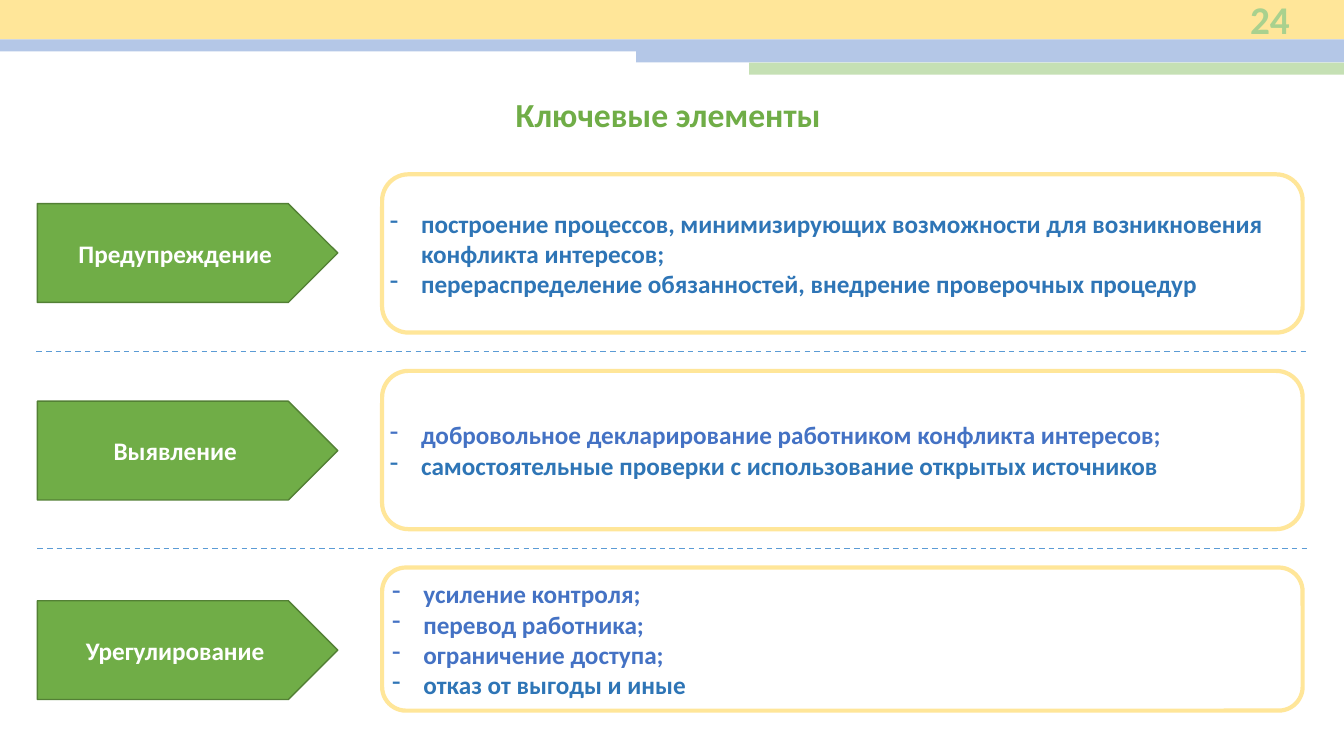
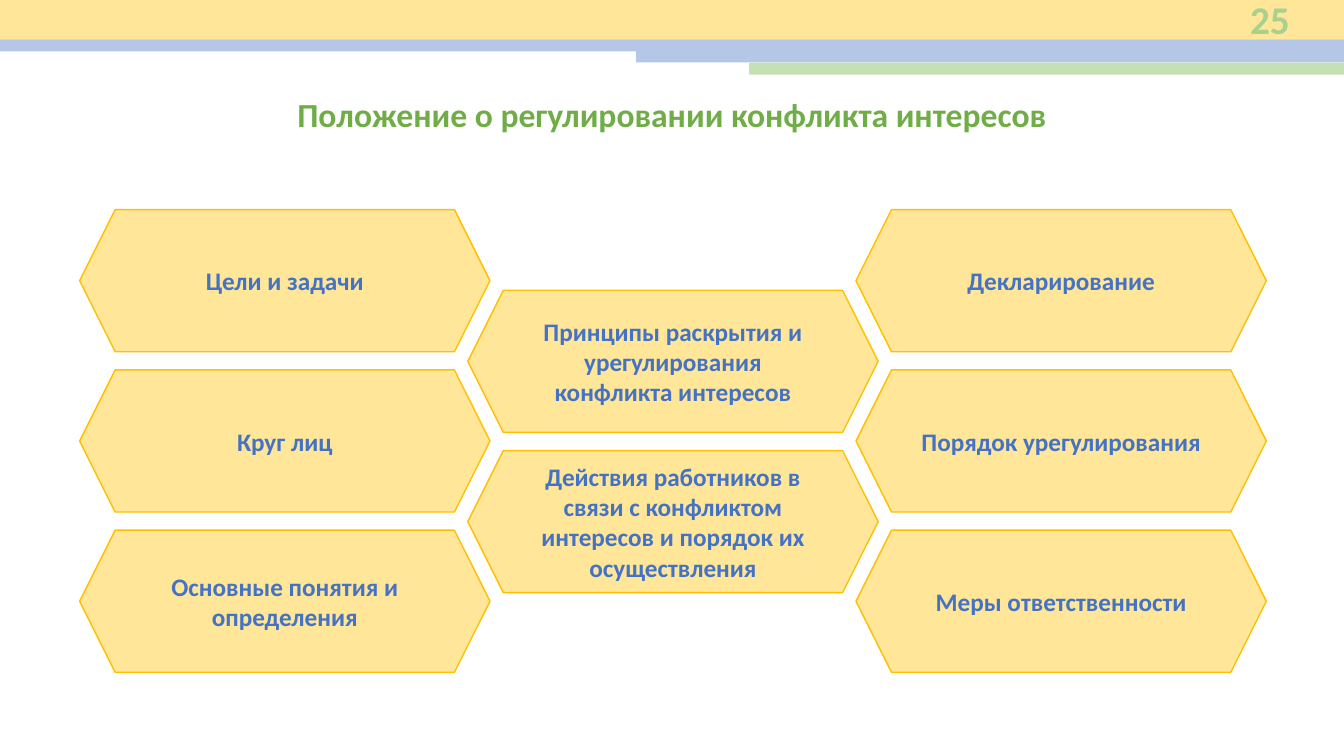
"""Build two slides about managing conflicts of interest."""
from lxml import etree
from pptx import Presentation
from pptx.dml.color import RGBColor
from pptx.enum import dml, shapes, text
from pptx.oxml import ns
from pptx.util import Inches, Pt

YELLOW = RGBColor(0xFF, 0xE6, 0x99)
GOLD = RGBColor(0xFF, 0xC0, 0x00)
PALE_BLUE = RGBColor(0xB4, 0xC7, 0xE7)
PALE_GREEN = RGBColor(0xC5, 0xE0, 0xB4)
NUMBER_GREEN = RGBColor(0xA9, 0xD1, 0x8E)
GREEN = RGBColor(0x70, 0xAD, 0x47)
DARK_GREEN = RGBColor(0x53, 0x80, 0x35)
BLUE = RGBColor(0x44, 0x72, 0xC4)
DEEP_BLUE = RGBColor(0x2E, 0x75, 0xB6)
LINE_BLUE = RGBColor(0x5B, 0x9B, 0xD5)
WHITE = RGBColor(0xFF, 0xFF, 0xFF)

SLIDE_WIDTH = 13.33
BODY_SIZE = 18
BULLET_INDENT = 0.31
HEXAGON_WIDTH, HEXAGON_HEIGHT = 4.07, 1.41
COLUMN_STEP, ROW_STEP = 3.85, 1.59

BANDS = [
    (0, 0, 0.39, YELLOW),
    (0, 0.39, 0.12, PALE_BLUE),
    (6.31, 0.5, 0.12, PALE_BLUE),
    (7.43, 0.62, 0.12, PALE_GREEN),
]

ELEMENTS = [
    ("Предупреждение", 2.02, 1.73, 1.57, 0, [
        ("построение процессов, минимизирующих возможности для "
         "возникновения конфликта интересов;", DEEP_BLUE),
        ("перераспределение обязанностей, внедрение проверочных процедур", DEEP_BLUE),
    ]),
    ("Выявление", 3.98, 3.68, 1.57, 0, [
        ("добровольное декларирование работником конфликта интересов;", BLUE),
        ("самостоятельные проверки с использование открытых источников", DEEP_BLUE),
    ]),
    ("Урегулирование", 5.96, 5.63, 1.42, 0.03, [
        ("усиление контроля;", BLUE),
        ("перевод работника;", BLUE),
        ("ограничение доступа;", BLUE),
        ("отказ от выгоды и иные", DEEP_BLUE),
    ]),
]

HEXAGON_COLUMNS = [
    (2.08, ["Цели и задачи", "Круг лиц", "Основные понятия и определения"]),
    (2.88, ["Принципы раскрытия и урегулирования конфликта интересов",
            "Действия работников в связи с конфликтом интересов "
            "и порядок их осуществления"]),
    (2.08, ["Декларирование", "Порядок урегулирования", "Меры ответственности"]),
]


def apply_format(target, values):
    """Set every attribute named in the format values."""
    for name, value in values.items():
        setattr(target, name, value)


def add_filled_shape(slide, kind, box, fill=None, line=None, line_width=1):
    """Add a preset shape without a shadow."""
    shape = slide.shapes.add_shape(kind, *map(Inches, box))
    shape.shadow.inherit = False
    if fill is None:
        shape.fill.background()
    else:
        shape.fill.solid()
        shape.fill.fore_color.rgb = fill
    if line is None:
        shape.line.fill.background()
    else:
        shape.line.color.rgb = line
        shape.line.width = Pt(line_width)
    return shape


def write_paragraph(paragraph, words, size, color, alignment):
    """Write one bold run into a paragraph."""
    paragraph.alignment = alignment
    run = paragraph.add_run()
    run.text = words
    apply_format(run.font, {"name": "Calibri", "size": Pt(size), "bold": True})
    run.font.color.rgb = color


def write_label(shape, words, size, color, alignment=text.PP_ALIGN.CENTER,
                anchor=text.MSO_ANCHOR.MIDDLE):
    """Write a single wrapped paragraph into a shape."""
    frame = shape.text_frame
    apply_format(frame, {"word_wrap": True, "vertical_anchor": anchor})
    write_paragraph(frame.paragraphs[0], words, size, color, alignment)


def add_dash_bullet(paragraph):
    """Give a paragraph a hanging dash bullet."""
    properties = paragraph._p.get_or_add_pPr()
    indent = Inches(BULLET_INDENT)
    properties.set("marL", str(indent))
    properties.set("indent", str(-indent))
    etree.SubElement(properties, ns.qn("a:buFontTx"))
    etree.SubElement(properties, ns.qn("a:buChar")).set("char", "-")


def add_bullet_box(slide, top, height, left_margin, items):
    """Add a rounded outline that holds a bulleted list."""
    shape = add_filled_shape(slide, shapes.MSO_SHAPE.ROUNDED_RECTANGLE,
                             (3.79, top, 9.13, height), line=YELLOW, line_width=3)
    frame = shape.text_frame
    apply_format(frame, {
        "word_wrap": True, "vertical_anchor": text.MSO_ANCHOR.MIDDLE,
        "margin_left": Inches(left_margin), "margin_right": 0,
        "margin_top": 0, "margin_bottom": 0,
    })
    for index, (words, color) in enumerate(items):
        paragraph = frame.add_paragraph() if index else frame.paragraphs[0]
        write_paragraph(paragraph, words, BODY_SIZE, color, text.PP_ALIGN.LEFT)
        add_dash_bullet(paragraph)


def add_divider(slide, left, top):
    """Add a dashed horizontal line."""
    connector = slide.shapes.add_connector(
        shapes.MSO_CONNECTOR.STRAIGHT,
        *map(Inches, (left, top, left + 12.61, top)))
    connector.line.color.rgb = LINE_BLUE
    apply_format(connector.line, {"width": Pt(1), "dash_style": dml.MSO_LINE.DASH})
    etree.SubElement(connector._element.spPr, ns.qn("a:effectLst"))


def add_base_slide(presentation, number, title):
    """Add a slide with the bands, page number and title."""
    slide = presentation.slides.add_slide(presentation.slide_layouts[6])
    for left, top, height, color in BANDS:
        add_filled_shape(slide, shapes.MSO_SHAPE.RECTANGLE,
                         (left, top, SLIDE_WIDTH - left, height), color)
    number_box = slide.shapes.add_textbox(*map(Inches, (11.9, 0, 0.99, 0.38)))
    write_label(number_box, number, 28, NUMBER_GREEN, text.PP_ALIGN.RIGHT)
    title_box = slide.shapes.add_textbox(*map(Inches, (0.6, 0.88, 12.13, 0.5)))
    write_label(title_box, title, 24, GREEN, anchor=text.MSO_ANCHOR.TOP)
    return slide


def add_elements_slide(presentation):
    """Add the slide with three labelled lists."""
    slide = add_base_slide(presentation, "24", "Ключевые элементы ")
    for label, arrow_top, box_top, box_height, left_margin, items in ELEMENTS:
        arrow = add_filled_shape(slide, shapes.MSO_SHAPE.PENTAGON,
                                 (0.37, arrow_top, 2.98, 0.98), GREEN, DARK_GREEN)
        write_label(arrow, label, BODY_SIZE, WHITE)
        add_bullet_box(slide, box_top, box_height, left_margin, items)
    for left, top in ((0.36, 3.49), (0.37, 5.44)):
        add_divider(slide, left, top)


def add_policy_slide(presentation):
    """Add the slide with the hexagon columns."""
    slide = add_base_slide(presentation, "25",
                           "Положение о регулировании конфликта интересов")
    for column, (first_top, labels) in enumerate(HEXAGON_COLUMNS):
        for row, label in enumerate(labels):
            box = (0.79 + column * COLUMN_STEP, first_top + row * ROW_STEP,
                   HEXAGON_WIDTH, HEXAGON_HEIGHT)
            hexagon = add_filled_shape(slide, shapes.MSO_SHAPE.HEXAGON, box,
                                       YELLOW, GOLD)
            write_label(hexagon, label, BODY_SIZE, BLUE)


def main():
    """Build and save the presentation."""
    presentation = Presentation()
    apply_format(presentation, {"slide_width": Inches(SLIDE_WIDTH),
                                "slide_height": Inches(7.5)})
    add_elements_slide(presentation)
    add_policy_slide(presentation)
    presentation.save("out.pptx")


if __name__ == "__main__":
    main()
